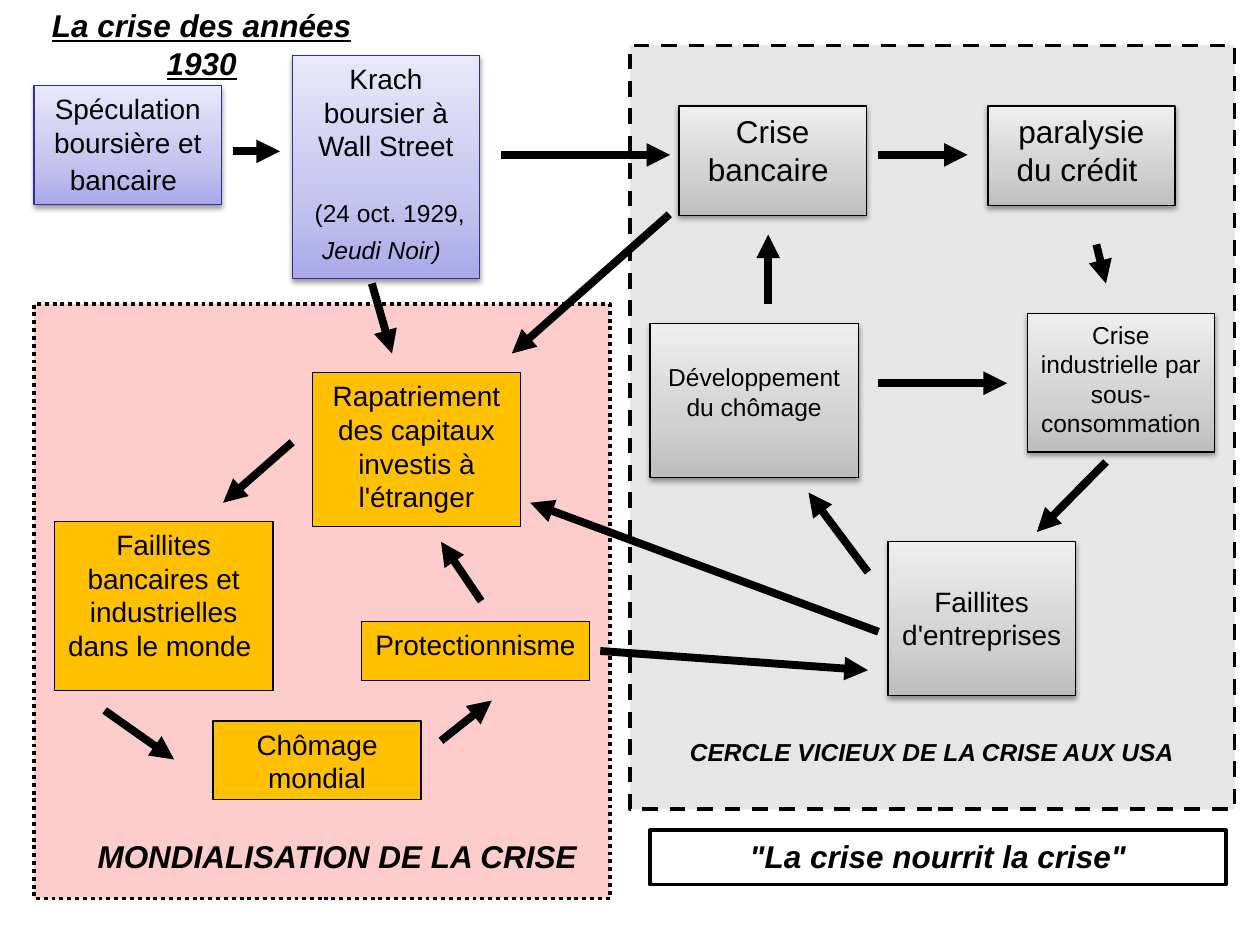
"""Build the flow diagram of the 1930s crisis."""
from copy import deepcopy

from lxml import etree
from pptx import Presentation
from pptx import util as u
from pptx.dml.color import RGBColor
from pptx.enum import dml, shapes, text
from pptx.oxml.ns import qn

COLORS = {
    "ink": "000000", "navy": "2F2F98", "gold": "FFC000",
    "world": "FFCCCC", "usa": "E6E6E6",
}
GRADIENTS = {
    "origin": ("A9A9E9", "C4C4EF", "E8E8FA"),
    "american": ("BDBDBD", "D1D1D1", "EEEEEE"),
}
STOPS = (0, 0.35, 1)
STRONG = {"bold": True, "italic": True}


class Diagram:
    def __init__(self, slide, font="Arial"):
        self.slide = slide
        self.font = font

    def color(self, name):
        return RGBColor.from_string(COLORS[name])

    def add_text(self, shape, paragraphs, top=3.6, gap=0):
        frame = shape.text_frame
        frame.word_wrap = True
        frame.auto_size = text.MSO_AUTO_SIZE.NONE
        frame.vertical_anchor = text.MSO_ANCHOR.TOP
        frame.margin_top = u.Pt(top)
        for index, runs in enumerate(paragraphs):
            paragraph = frame.add_paragraph() if index else frame.paragraphs[0]
            paragraph.alignment = text.PP_ALIGN.CENTER
            paragraph.space_before = u.Pt(gap if index else 0)
            for words, size, style in runs:
                run = paragraph.add_run()
                run.text = words
                run.font.name = self.font
                run.font.size = u.Pt(size)
                run.font.color.rgb = self.color("ink")
                for name, value in style.items():
                    setattr(run.font, name, value)

    def title(self, area, words, size):
        shape = self.slide.shapes.title
        shape.left, shape.top, shape.width, shape.height = map(u.Pt, area)
        self.add_text(shape, [[(words, size, {**STRONG, "underline": True})]])
        shape.text_frame.word_wrap = False

    def label(self, area, words, size):
        shape = self.slide.shapes.add_textbox(*map(u.Pt, area))
        self.add_text(shape, [[(words, size, STRONG)]])

    def box(self, area, fill=None, line="ink", width=0.75, dash=None):
        shape = self.slide.shapes.add_shape(
            shapes.MSO_SHAPE.RECTANGLE, *map(u.Pt, area))
        shape.shadow.inherit = False
        shape.line.color.rgb = self.color(line)
        shape.line.width = u.Pt(width)
        if dash:
            shape.line.dash_style = dash
        if fill:
            shape.fill.solid()
            shape.fill.fore_color.rgb = self.color(fill)
        else:
            shape.fill.background()
        return shape

    def raised_box(self, area, gradient, line="ink"):
        shape = self.box(area, line=line)
        shape.fill.gradient()
        shape.fill.gradient_angle = 90
        properties = shape.element.spPr
        stops = properties.find(".//" + qn("a:gsLst"))
        stops.insert(1, deepcopy(stops[0]))
        for stop, position, value in zip(
                shape.fill.gradient_stops, STOPS, GRADIENTS[gradient]):
            stop.position = position
            stop.color.rgb = RGBColor.from_string(value)
        shadow = etree.SubElement(
            properties.find(qn("a:effectLst")), qn("a:outerShdw"),
            blurRad=str(u.Pt(3.1)), dist=str(u.Pt(1.6)),
            dir="5400000", rotWithShape="0")
        color = etree.SubElement(shadow, qn("a:srgbClr"), val=COLORS["ink"])
        etree.SubElement(color, qn("a:alpha"), val="38000")
        return shape

    def arrow(self, *ends):
        connector = self.slide.shapes.add_connector(
            shapes.MSO_CONNECTOR.STRAIGHT, *map(u.Pt, ends))
        connector.line.color.rgb = self.color("ink")
        connector.line.width = u.Pt(4.5)
        properties = connector.element.spPr
        etree.SubElement(
            properties.find(qn("a:ln")), qn("a:tailEnd"), type="triangle")
        etree.SubElement(properties, qn("a:effectLst"))


ORIGIN_BOXES = [
    ((19.5, 49, 107, 68), [
        [("Spéculation boursière et bancaire", 16, {}), (" ", 18, {})]]),
    ((167, 31.7, 107, 127.5), [
        [("Krach boursier à Wall Street", 16, {})],
        [(" ", 16, {}), ("(24 oct. 1929, ", 14, {}),
         ("Jeudi Noir)", 14, {"italic": True}), (" ", 18, {})]]),
]
AMERICAN_BOXES = [
    ((388, 60.5, 107, 62.5), "Crise bancaire ", 18, 3.6),
    ((564.5, 60.5, 107, 57), "paralysie du crédit ", 18, 3.6),
    ((587, 179.3, 107, 79), "Crise industrielle par sous-consommation ", 14, 3.6),
    ((507.5, 309.5, 107, 88), "Faillites d'entreprises", 16, 24.3),
    ((371.5, 185, 119, 88), "Développement du chômage", 14, 22),
]
WORLD_BOXES = [
    ((178.5, 213, 119, 88), "Rapatriement des capitaux investis à l'étranger"),
    ((31, 298, 125, 96.5),
     "Faillites bancaires et industrielles dans le monde "),
    ((121.7, 412, 119, 45), "Chômage mondial"),
    ((206.5, 355, 130.5, 34), "Protectionnisme"),
]
ARROWS = [
    (133, 86.5, 160, 86.5), (286.5, 88.5, 383, 88.5), (502, 88.5, 553, 88.5),
    (626.5, 139.7, 632, 162), (632, 264, 592.5, 304), (496, 327, 462, 281.5),
    (502, 219, 575.5, 219), (439, 173.5, 439, 134), (382.5, 122.5, 292.5, 202),
    (212.5, 162, 224, 202), (502, 361, 303, 287.3), (167, 252.7, 127.5, 287.3),
    (59.8, 406, 99.5, 434), (252, 423.3, 281, 400.3), (343, 372, 496, 383),
    (275, 343.5, 252, 309.6),
]


def main():
    presentation = Presentation()
    presentation.slide_width, presentation.slide_height = u.Pt(720), u.Pt(540)
    slide = presentation.slides.add_slide(presentation.slide_layouts[5])
    diagram = Diagram(slide)
    diagram.title((0, 0, 230.5, 29), "La crise des années 1930", 18)
    diagram.box((19.5, 173.5, 329, 340), "world", width=2.25,
                dash=dml.MSO_LINE.ROUND_DOT)
    diagram.box((360, 26, 345.5, 436.5), "usa", width=2.25,
                dash=dml.MSO_LINE.DASH)
    for area, paragraphs in ORIGIN_BOXES:
        diagram.add_text(diagram.raised_box(area, "origin", "navy"),
                         paragraphs, gap=18.4)
    for area, words, size, top in AMERICAN_BOXES:
        diagram.add_text(diagram.raised_box(area, "american"),
                         [[(words, size, {})]], top)
    for area, words in WORLD_BOXES:
        diagram.add_text(diagram.box(area, "gold"), [[(words, 16, {})]])
    for ends in ARROWS:
        diagram.arrow(*ends)
    diagram.label((382.5, 417.5, 300, 24),
                  "CERCLE VICIEUX DE LA CRISE AUX USA", 14)
    diagram.label((48, 474.5, 289.5, 29), "MONDIALISATION DE LA CRISE", 18)
    diagram.add_text(diagram.box((371.5, 474.5, 329, 31), width=2.25),
                     [[('"La crise nourrit la crise"', 18, STRONG)]])
    presentation.save("out.pptx")


if __name__ == "__main__":
    main()
